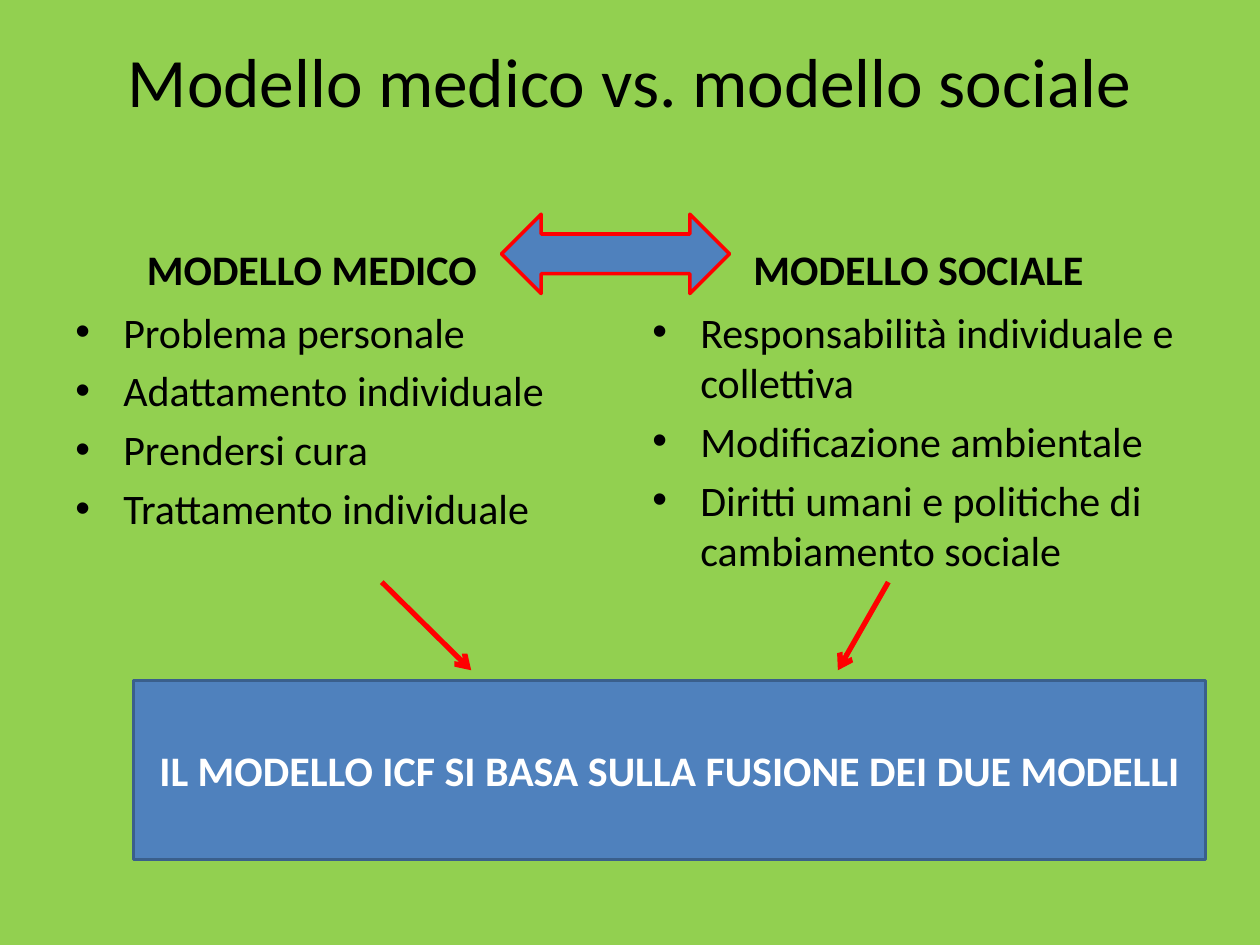
from dataclasses import dataclass

import pptx
import pptx.dml.color
import pptx.enum.shapes
import pptx.enum.text
import pptx.oxml
import pptx.oxml.ns
import pptx.util
from pptx.dml.color import RGBColor
from pptx.enum.shapes import MSO_CONNECTOR, MSO_SHAPE
from pptx.enum.text import MSO_ANCHOR, PP_ALIGN
from pptx.util import Inches

GREEN = RGBColor(0x92, 0xD0, 0x50)
BLUE = RGBColor(0x4F, 0x81, 0xBD)
DARK_BLUE = RGBColor(0x3A, 0x5F, 0x8C)
RED = RGBColor(0xFF, 0x00, 0x00)
BLACK = RGBColor(0x00, 0x00, 0x00)
WHITE = RGBColor(0xFF, 0xFF, 0xFF)

FONT = "Calibri"
BODY_TOP = 2.38
BODY_WIDTH = 4.42
INDENT = Inches(0.38)


@dataclass
class Model:
    heading: str
    points: list[str]
    left: float
    heading_top: float
    heading_width: float


@dataclass
class Arrow:
    start: tuple[float, float]
    end: tuple[float, float]


MODELS = [
    Model("MODELLO MEDICO",
          ["Problema personale", "Adattamento individuale",
           "Prendersi cura", "Trattamento individuale"],
          0.5, 1.7, 3.95),
    Model("MODELLO SOCIALE",
          ["Responsabilità individuale e collettiva",
           "Modificazione ambientale",
           "Diritti umani e politiche di cambiamento sociale"],
          5.08, 1.68, BODY_WIDTH),
]
ARROWS = [
    Arrow((3.03, 4.62), (3.74, 5.32)),
    Arrow((7.05, 4.62), (6.65, 5.32)),
]


def write(tf, lines: list[str], *, size: float = 24, color: RGBColor = BLACK,
          bold: bool = False, align=PP_ALIGN.CENTER, anchor=MSO_ANCHOR.MIDDLE,
          before: float = 0, bullet: bool = False) -> None:
    """Fill a text frame with one paragraph per line."""
    tf.word_wrap = True
    tf.vertical_anchor = anchor
    for i, line in enumerate(lines):
        p = tf.paragraphs[0] if i == 0 else tf.add_paragraph()
        p.alignment = align
        p.space_before = pptx.util.Pt(before)
        r = p.add_run()
        r.text = line
        r.font.name = FONT
        r.font.size = pptx.util.Pt(size)
        r.font.bold = bold
        r.font.color.rgb = color
        if bullet:
            pPr = p._p.get_or_add_pPr()
            pPr.set("marL", str(INDENT))
            pPr.set("indent", str(-INDENT))
            font = pptx.oxml.ns.qn("a:buFont")
            pPr.append(pPr.makeelement(font, {"typeface": "Arial"}))
            char = pptx.oxml.ns.qn("a:buChar")
            pPr.append(pPr.makeelement(char, {"char": "•"}))


def add_model(s, model: Model) -> None:
    """Draw a bold heading with its bullet list below."""
    heading = s.shapes.add_textbox(
        Inches(model.left), Inches(model.heading_top),
        Inches(model.heading_width), Inches(BODY_TOP - model.heading_top))
    write(heading.text_frame, [model.heading], bold=True,
          anchor=MSO_ANCHOR.BOTTOM, before=4.8)
    body = s.shapes.add_textbox(
        Inches(model.left), Inches(BODY_TOP), Inches(BODY_WIDTH), Inches(4.32))
    write(body.text_frame, model.points, align=PP_ALIGN.LEFT,
          anchor=MSO_ANCHOR.TOP, before=4.8, bullet=True)


def add_block(s, kind, left: float, top: float, width: float, height: float,
              line: RGBColor):
    """Draw a blue preset shape with a coloured outline."""
    sp = s.shapes.add_shape(kind, Inches(left), Inches(top),
                            Inches(width), Inches(height))
    sp.shadow.inherit = False
    sp.fill.solid()
    sp.fill.fore_color.rgb = BLUE
    sp.line.color.rgb = line
    sp.line.width = pptx.util.Pt(2)
    return sp


def add_arrow(s, arrow: Arrow) -> None:
    """Draw a red line with an open arrowhead at its end."""
    cxn = s.shapes.add_connector(
        MSO_CONNECTOR.STRAIGHT,
        *(Inches(v) for v in arrow.start + arrow.end))
    cxn.line.color.rgb = RED
    cxn.line.width = pptx.util.Pt(3)
    ln = cxn.line._get_or_add_ln()
    ln.append(ln.makeelement(pptx.oxml.ns.qn("a:tailEnd"), {"type": "arrow"}))
    spPr = cxn._element.spPr
    spPr.append(spPr.makeelement(pptx.oxml.ns.qn("a:effectLst"), {}))


def main() -> None:
    prs = pptx.Presentation()
    prs.slide_width, prs.slide_height = Inches(10), Inches(7.5)
    s = prs.slides.add_slide(prs.slide_layouts[5])
    s.background.fill.solid()
    s.background.fill.fore_color.rgb = GREEN

    # Title
    title = s.shapes.title
    title.left, title.top = Inches(0.5), Inches(0.3)
    title.width, title.height = Inches(9), Inches(1.25)
    title.text_frame.margin_top = 0
    write(title.text_frame, ["Modello medico vs. modello sociale"],
          size=39.6, anchor=MSO_ANCHOR.TOP)

    # The two models
    for model in MODELS:
        add_model(s, model)

    # Conclusion and arrows
    box = add_block(s, MSO_SHAPE.RECTANGLE, 1.06, 5.4, 8.51, 1.42, DARK_BLUE)
    write(box.text_frame,
          ["IL MODELLO ICF SI BASA SULLA FUSIONE DEI DUE MODELLI"],
          color=WHITE, bold=True)
    add_block(s, MSO_SHAPE.LEFT_RIGHT_ARROW, 3.98, 1.7, 1.81, 0.63, RED)
    for arrow in ARROWS:
        add_arrow(s, arrow)

    prs.save("out.pptx")


if __name__ == "__main__":
    main()
